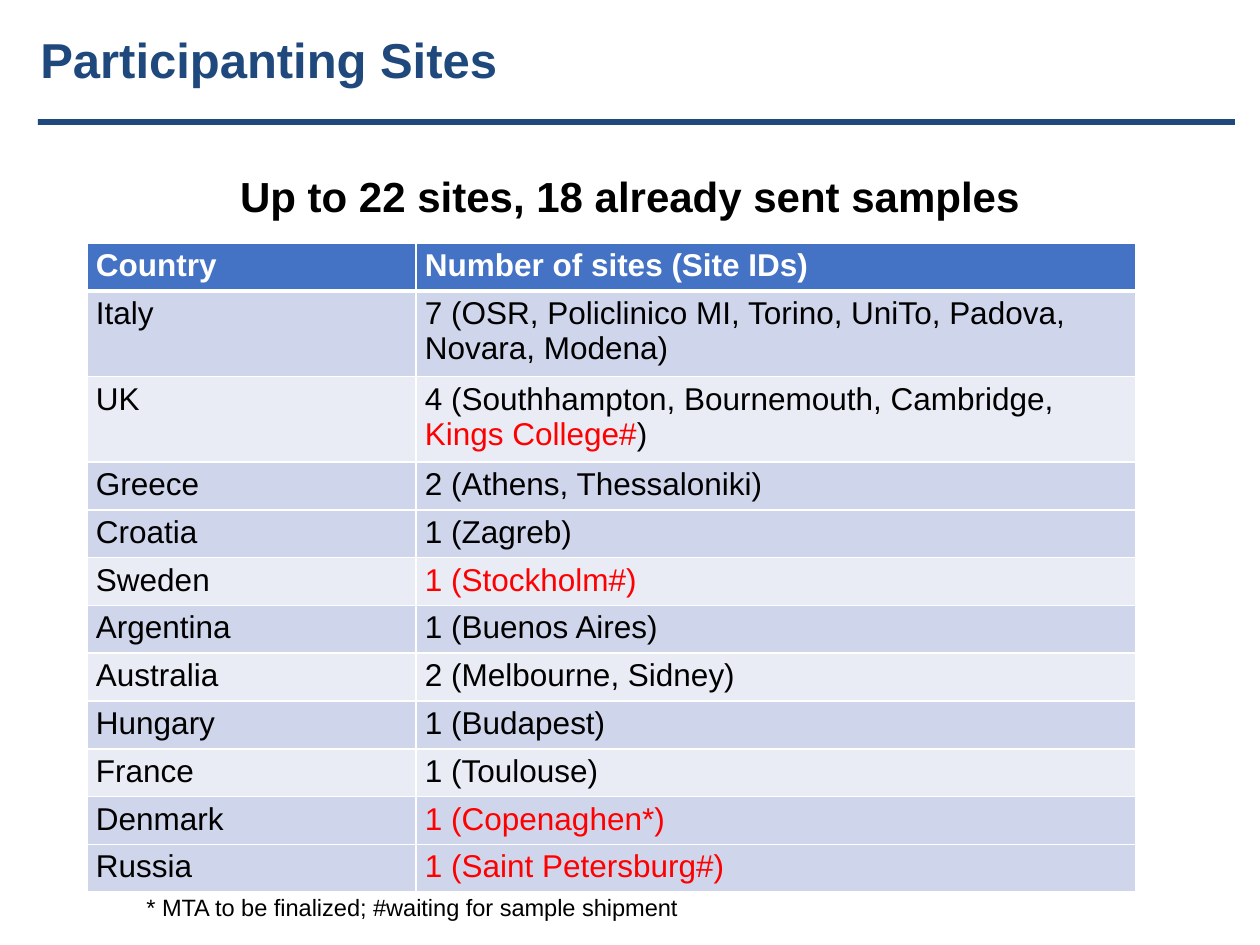
from dataclasses import dataclass

import lxml.etree
import pptx
import pptx.dml.color
import pptx.enum.shapes
import pptx.enum.text
import pptx.oxml.ns
import pptx.util

PX = pptx.util.Inches(1) / 126
LEFT = pptx.enum.text.PP_ALIGN.LEFT
CENTER = pptx.enum.text.PP_ALIGN.CENTER
TOP = pptx.enum.text.MSO_ANCHOR.TOP
MIDDLE = pptx.enum.text.MSO_ANCHOR.MIDDLE


@dataclass(frozen=True)
class Theme:
    font: str = "Arial"
    navy: str = "1F497D"
    ink: str = "000000"
    white: str = "FFFFFF"
    pending: str = "FF0000"
    header: str = "4472C4"
    dark_band: str = "CFD5EA"
    light_band: str = "E9EBF5"
    title_size: float = 28
    summary_size: float = 24
    table_size: float = 18
    footnote_size: float = 13.5
    thin_border: float = 1
    header_border: float = 3


THEME = Theme()


@dataclass(frozen=True)
class Box:
    left: int
    top: int
    width: int
    height: int


@dataclass(frozen=True)
class Run:
    text: str
    color: str = THEME.ink


@dataclass(frozen=True)
class Caption:
    box: Box
    run: Run
    size: float
    bold: bool = False
    align: int = LEFT
    anchor: int = TOP


@dataclass(frozen=True)
class Row:
    country: Run
    sites: tuple[Run, ...]
    fill: str
    height: int = 47
    bold: bool = False


def country_row(country: str, *sites: Run, light: bool = False, height: int = 47) -> Row:
    fill = THEME.light_band if light else THEME.dark_band
    return Row(Run(country), sites, fill, height)


CAPTIONS = (
    Caption(Box(28, 16, 1222, 85), Run("Participanting Sites", THEME.navy),
            THEME.title_size, bold=True, anchor=MIDDLE),
    Caption(Box(5, 164, 1250, 63), Run("Up to 22 sites, 18 already sent samples"),
            THEME.summary_size, bold=True, align=CENTER),
    Caption(Box(134, 887, 936, 42),
            Run("* MTA to be finalized; #waiting for sample shipment"),
            THEME.footnote_size),
)
TITLE_RULE = Box(38, 119, 1197, 6)
TABLE_BOX = Box(87, 243, 1049, 642)
COLUMN_WIDTHS = (329, 720)
ROWS = (
    Row(Run("Country", THEME.white), (Run("Number of sites (Site IDs)", THEME.white),),
        THEME.header, height=48, bold=True),
    country_row("Italy", Run("7 (OSR, Policlinico MI, Torino, UniTo, Padova, Novara, Modena)"),
                height=85),
    country_row("UK", Run("4 (Southhampton, Bournemouth, Cambridge, "),
                Run("Kings College#", THEME.pending), Run(")"), light=True, height=85),
    country_row("Greece", Run("2 (Athens, Thessaloniki)")),
    country_row("Croatia", Run("1 (Zagreb)")),
    country_row("Sweden", Run("1 (Stockholm#)", THEME.pending), light=True),
    country_row("Argentina", Run("1 (Buenos Aires)")),
    country_row("Australia", Run("2 (Melbourne, Sidney)"), light=True),
    country_row("Hungary", Run("1 (Budapest)")),
    country_row("France", Run("1 (Toulouse)"), light=True),
    country_row("Denmark", Run("1 (Copenaghen*)", THEME.pending)),
    country_row("Russia", Run("1 (Saint Petersburg#)", THEME.pending)),
)


def emu(px: int) -> int:
    return round(px * PX)


def place(box: Box) -> tuple[int, ...]:
    return tuple(emu(px) for px in (box.left, box.top, box.width, box.height))


def rgb(color: str) -> pptx.dml.color.RGBColor:
    return pptx.dml.color.RGBColor.from_string(color)


def write(paragraph, runs: tuple[Run, ...], size: float, bold: bool) -> None:
    paragraph.font.name = THEME.font
    paragraph.font.size = pptx.util.Pt(size)
    paragraph.font.bold = bold
    shared_color = len({run.color for run in runs}) == 1
    if shared_color:
        paragraph.font.color.rgb = rgb(runs[0].color)
    for run in runs:
        part = paragraph.add_run()
        part.text = run.text
        if not shared_color:
            part.font.color.rgb = rgb(run.color)


def add_caption(slide, caption: Caption) -> None:
    frame = slide.shapes.add_textbox(*place(caption.box)).text_frame
    frame.word_wrap = True
    frame.vertical_anchor = caption.anchor
    frame.paragraphs[0].alignment = caption.align
    write(frame.paragraphs[0], (caption.run,), caption.size, caption.bold)


def add_title_rule(slide, box: Box) -> None:
    rule = slide.shapes.add_shape(pptx.enum.shapes.MSO_SHAPE.RECTANGLE, *place(box))
    rule.shadow.inherit = False
    rule.fill.solid()
    rule.fill.fore_color.rgb = rgb(THEME.navy)
    rule.line.fill.background()


def add_border(cell, side: str, width: float) -> None:
    qn = pptx.oxml.ns.qn
    line = lxml.etree.SubElement(cell._tc.get_or_add_tcPr(), qn(f"a:ln{side}"),
                                 w=str(pptx.util.Pt(width)))
    fill = lxml.etree.SubElement(line, qn("a:solidFill"))
    lxml.etree.SubElement(fill, qn("a:srgbClr"), val=THEME.white)


def fill_cell(cell, runs: tuple[Run, ...], row: Row, row_index: int) -> None:
    cell.margin_left = cell.margin_right = emu(9)
    cell.margin_top = cell.margin_bottom = emu(5)
    thick_side = {0: "B", 1: "T"}.get(row_index)
    for side in "LRTB":
        add_border(cell, side,
                   THEME.header_border if side == thick_side else THEME.thin_border)
    cell.fill.solid()
    cell.fill.fore_color.rgb = rgb(row.fill)
    write(cell.text_frame.paragraphs[0], runs, THEME.table_size, row.bold)


def add_site_table(slide) -> None:
    table = slide.shapes.add_table(len(ROWS), len(COLUMN_WIDTHS), *place(TABLE_BOX)).table
    table.horz_banding = False
    for column, width in zip(table.columns, COLUMN_WIDTHS):
        column.width = emu(width)
    for index, row in enumerate(ROWS):
        table.rows[index].height = emu(row.height)
        for column_index, runs in enumerate(((row.country,), row.sites)):
            fill_cell(table.cell(index, column_index), runs, row, index)


def main() -> None:
    deck = pptx.Presentation()
    deck.slide_width, deck.slide_height = emu(1260), emu(945)
    slide = deck.slides.add_slide(deck.slide_layouts[6])
    title, summary, footnote = CAPTIONS
    add_caption(slide, title)
    add_title_rule(slide, TITLE_RULE)
    add_caption(slide, summary)
    add_site_table(slide)
    add_caption(slide, footnote)
    deck.save("out.pptx")


if __name__ == "__main__":
    main()
